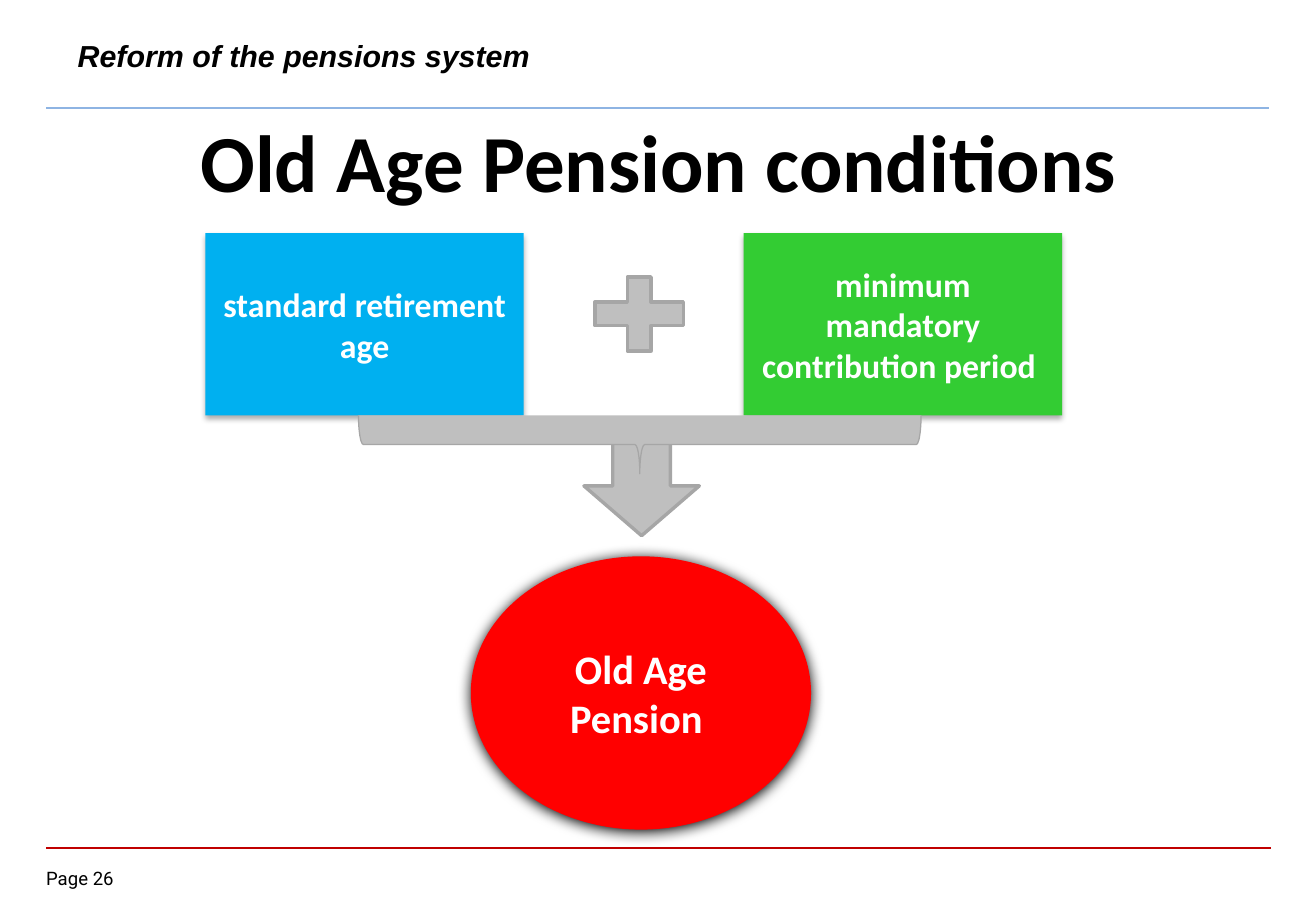
from lxml.etree import SubElement
from pptx import Presentation
from pptx.dml.color import RGBColor
from pptx.enum.shapes import MSO_CONNECTOR, MSO_SHAPE
from pptx.enum.text import MSO_ANCHOR, MSO_AUTO_SIZE, PP_ALIGN
from pptx.oxml.ns import qn
from pptx.util import Inches, Pt


def color(value):
    return RGBColor.from_string(value)


def write(shape, text, size, font="Calibri", fill="000000", bold=True,
          italic=False, align=PP_ALIGN.LEFT, anchor=MSO_ANCHOR.TOP, inset=None):
    tf = shape.text_frame
    tf.word_wrap = True
    tf.auto_size = MSO_AUTO_SIZE.NONE
    tf.vertical_anchor = anchor
    if inset is not None:
        tf.margin_left = tf.margin_right = Inches(inset)
        tf.margin_top = tf.margin_bottom = Inches(inset)
    p = tf.paragraphs[0]
    p.text = text
    p.alignment = align
    p.font.name, p.font.size = font, Pt(size)
    p.font.bold, p.font.italic = bold, italic
    p.font.color.rgb = color(fill)


def add_shadow(shape, alpha, blur, distance):
    """Black shadow falling straight down; blur and distance in points."""
    effects = shape._element.spPr.find(qn("a:effectLst"))
    shadow = SubElement(effects, qn("a:outerShdw"), blurRad=str(Pt(blur)),
                        dist=str(Pt(distance)), dir="5400000", rotWithShape="0")
    black = SubElement(shadow, qn("a:srgbClr"), val="000000")
    SubElement(black, qn("a:alpha"), val=str(alpha * 1000))


def add_shape(s, kind, box, fill):
    sp = s.shapes.add_shape(kind, *(Inches(v) for v in box))
    sp.shadow.inherit = False
    sp.fill.solid()
    sp.fill.fore_color.rgb = color(fill)
    sp.line.fill.background()
    return sp


def add_card(s, kind, box, fill, text, size, shadow):
    sp = add_shape(s, kind, box, fill)
    add_shadow(sp, *shadow)
    write(sp, text, size, fill="FFFFFF", align=PP_ALIGN.CENTER,
          anchor=MSO_ANCHOR.MIDDLE)


def add_symbol(s, kind, box, width):
    sp = add_shape(s, kind, box, "BFBFBF")
    sp.line.color.rgb = color("A6A6A6")
    sp.line.width = Pt(width)
    return sp


def add_rule(s, x, y, length, stroke, width):
    line = s.shapes.add_connector(MSO_CONNECTOR.STRAIGHT, Inches(x), Inches(y),
                                  Inches(x + length), Inches(y))
    line.line.color.rgb = color(stroke)
    line.line.width = Pt(width)
    SubElement(line._element.spPr, qn("a:effectLst"))


def add_label(s, box, text, size, **style):
    tb = s.shapes.add_textbox(*(Inches(v) for v in box))
    write(tb, text, size, **style)


def add_frame(s, x, y, w, h):
    """Header, title and footer around the content area."""
    add_rule(s, x, y + 6.09, w, "C00000", 1)
    add_rule(s, x, y, w - 0.02, "8EB4E3", 1.5)
    add_label(s, (x, y + h, 0.73, 0.22), "Page 26", 11,
              font="Roboto", bold=False, inset=0)
    add_label(s, (x + 0.16, y - 0.63, w - 0.16, 0.71),
              "Reform of the pensions system", 18, font="Arial", italic=True)
    title = s.shapes.title
    title.left, title.top = Inches(x), Inches(y + 0.02)
    title.width, title.height = Inches(w), Inches(0.82)
    write(title, "Old Age Pension conditions", 48,
          align=PP_ALIGN.CENTER, anchor=MSO_ANCHOR.MIDDLE)


def add_diagram(s, x, y, w, h):
    """Two conditions, joined by a brace, lead down to the pension."""
    center = x + w / 2 + 0.06
    card_w, card_h = 2.62, 1.5

    # Conditions
    conditions = [
        (x, "00B0F0", "standard retirement age"),
        (x + w - card_w, "33CC33", "minimum mandatory contribution period "),
    ]
    for left, fill, text in conditions:
        add_card(s, MSO_SHAPE.RECTANGLE, (left, y, card_w, card_h), fill,
                 text, 20, (32, 3.5, 2.2))

    # Plus sign and arrow
    add_symbol(s, MSO_SHAPE.MATH_PLUS, (center - 0.51, y + 0.25, 0.99, 0.83), 2)
    add_symbol(s, MSO_SHAPE.DOWN_ARROW,
               (center - 0.47, y + 1.67, 0.95, 0.82), 2)

    # Brace, turned to point down
    depth, span = 0.48, 4.63
    brace = add_symbol(s, MSO_SHAPE.RIGHT_BRACE,
                       (center - 0.01 - depth / 2,
                        y + card_h + (depth - span) / 2, depth, span), 0.75)
    brace.rotation = 90

    # Result
    result_w, result_h = 2.8, 2.25
    add_card(s, MSO_SHAPE.OVAL,
             (center - result_w / 2, y + h - result_h, result_w, result_h),
             "FF0000", "Old Age Pension ", 24, (100, 8.5, 1))


def main():
    prs = Presentation()
    prs.slide_width, prs.slide_height = Inches(10.83), Inches(7.5)
    s = prs.slides.add_slide(prs.slide_layouts[5])
    add_frame(s, 0.38, 0.89, 10.08, 6.25)
    add_diagram(s, 1.69, 1.92, 7.05, 4.91)
    prs.save("out.pptx")


if __name__ == "__main__":
    main()
